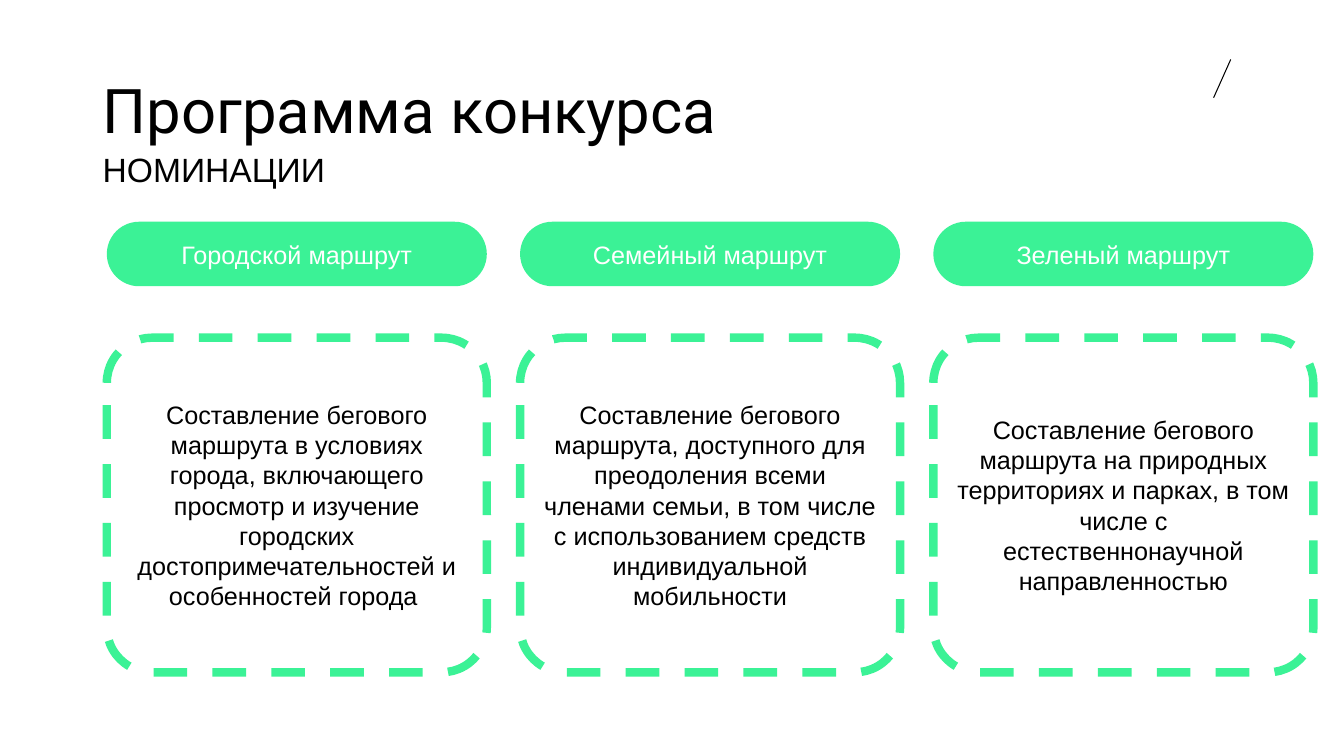
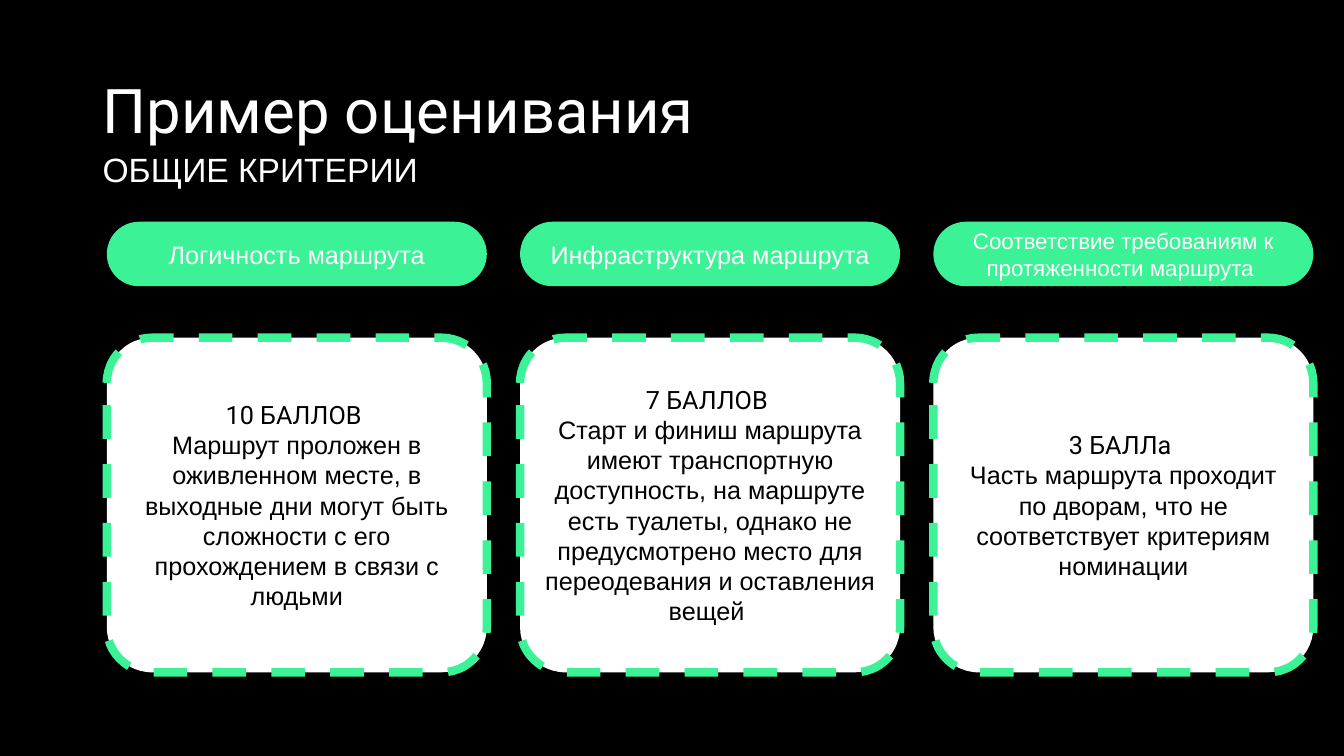
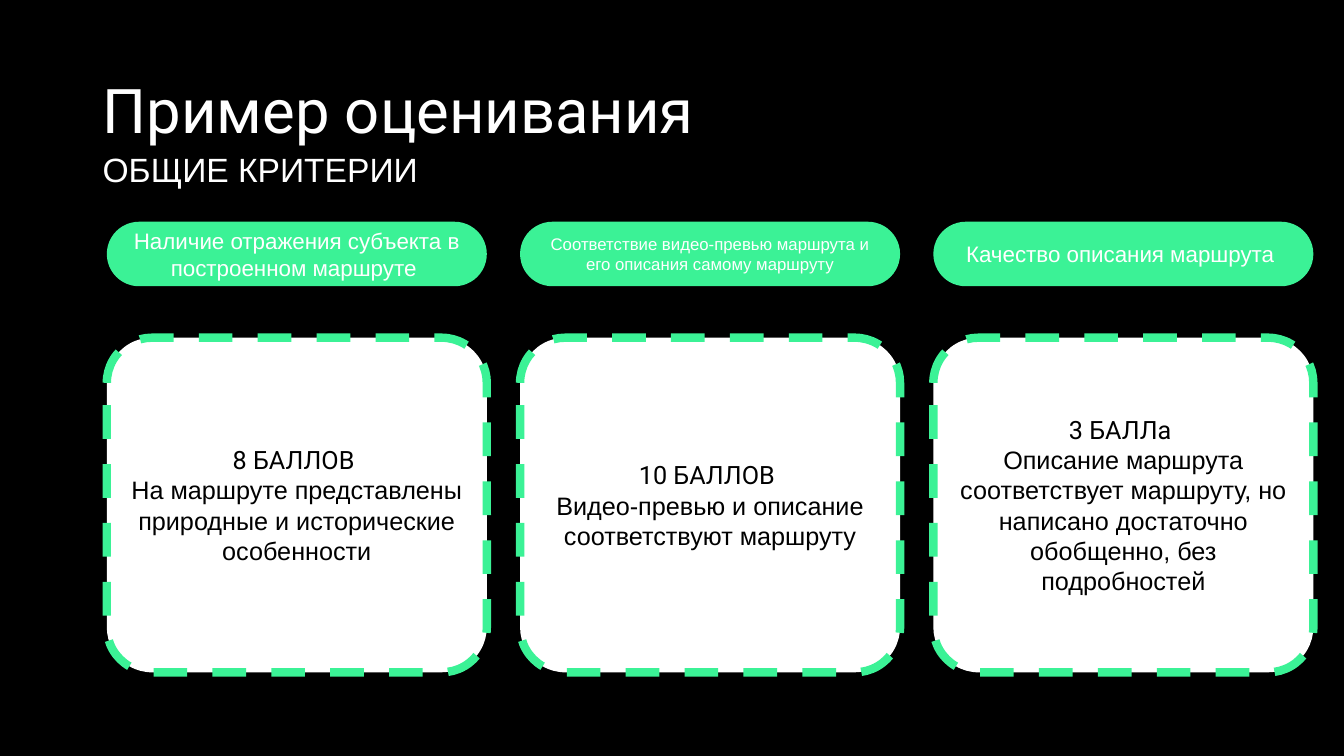
from pptx import Presentation
from pptx.dml.color import RGBColor
from pptx.enum.dml import MSO_LINE
from pptx.enum.shapes import MSO_CONNECTOR, MSO_SHAPE
from pptx.enum.text import MSO_ANCHOR, MSO_AUTO_SIZE, PP_ALIGN
from pptx.oxml.ns import qn
from pptx.util import Pt
from lxml import etree

# Shared look: 100 px to the inch
PX = 9144
BLACK = RGBColor(0x00, 0x00, 0x00)
WHITE = RGBColor(0xFF, 0xFF, 0xFF)
GREEN = RGBColor(0x3B, 0xF2, 0x96)
HEAD, BODY = "Roboto", "Arial"
LEFT, STEP, WIDE = 106, 410, 377

# Title, subtitle, dark theme, columns of (label, label size, lines)
SLIDES = [
    ("Программа конкурса", "НОМИНАЦИИ", False, [
        ("Городской маршрут", 18, [
            "Составление бегового маршрута в условиях города, включающего "
            "просмотр и изучение городских достопримечательностей и "
            "особенностей города "]),
        ("Семейный маршрут", 18, [
            "Составление бегового маршрута, доступного для преодоления всеми "
            "членами семьи, в том числе с использованием средств "
            "индивидуальной мобильности"]),
        ("Зеленый маршрут", 18, [
            "Составление бегового маршрута на природных территориях и парках, "
            "в том числе с естественнонаучной направленностью"]),
    ]),
    ("Пример оценивания", "ОБЩИЕ КРИТЕРИИ", True, [
        ("Логичность маршрута", 18, [
            "10 БАЛЛОВ ",
            "Маршрут проложен в оживленном месте, в выходные дни могут быть "
            "сложности с его прохождением в связи с людьми"]),
        ("Инфраструктура маршрута", 18, [
            "7 БАЛЛОВ ",
            "Старт и финиш маршрута имеют транспортную доступность, на "
            "маршруте есть туалеты, однако не предусмотрено место для "
            "переодевания и оставления вещей "]),
        ("Соответствие требованиям к протяженности маршрута ", 16, [
            "3 БАЛЛа ",
            "Часть маршрута проходит по дворам, что не соответствует "
            "критериям номинации"]),
    ]),
    ("Пример оценивания", "ОБЩИЕ КРИТЕРИИ", True, [
        ("Наличие отражения субъекта в построенном маршруте ", 16, [
            "8 БАЛЛОВ ",
            "На маршруте представлены природные и исторические особенности"]),
        ("Соответствие видео-превью маршрута и его описания самому маршруту",
         12, [
            "10 БАЛЛОВ ",
            "Видео-превью и описание соответствуют маршруту"]),
        ("Качество описания маршрута ", 16, [
            "3 БАЛЛа ",
            "Описание маршрута соответствует маршруту, но написано достаточно "
            "обобщенно, без подробностей"]),
    ]),
]


def write(frame, lines, size, color, align, fonts):
    """Fill a text frame, one paragraph per line."""
    frame.word_wrap = True
    frame.text = "\n".join(lines)
    for para, name in zip(frame.paragraphs, fonts):
        para.alignment = align
        para.font.name = name
        para.font.size = Pt(size)
        para.font.color.rgb = color


def add_box(slide, x, y, high, round_by, fill):
    """Add a rounded box of one column's width."""
    box = slide.shapes.add_shape(MSO_SHAPE.ROUNDED_RECTANGLE, x * PX, y * PX,
                                 WIDE * PX, high * PX)
    box.adjustments[0] = round_by
    box.shadow.inherit = False
    box.fill.solid()
    box.fill.fore_color.rgb = fill
    box.text_frame.vertical_anchor = MSO_ANCHOR.MIDDLE
    return box


deck = Presentation()
deck.slide_width, deck.slide_height = 1333 * PX + 3048, 750 * PX

for head, sub, dark, cols in SLIDES:
    slide = deck.slides.add_slide(deck.slide_layouts[5])
    ink = WHITE if dark else BLACK
    back = slide.background.fill
    back.solid()
    back.fore_color.rgb = BLACK if dark else WHITE

    # Slanted corner stroke on light slides
    if not dark:
        slash = slide.shapes.add_connector(
            MSO_CONNECTOR.STRAIGHT, 1204 * PX, 97 * PX, 1221 * PX, 59 * PX)
        slash.line.color.rgb = BLACK
        slash.line.width = Pt(0.75)
        etree.SubElement(slash._element.spPr, qn("a:effectLst"))

    # Title and subtitle
    title = slide.shapes.title
    title.left, title.top = 92 * PX, 40 * PX
    title.width, title.height = 1150 * PX, 145 * PX
    title.text_frame.vertical_anchor = MSO_ANCHOR.MIDDLE
    write(title.text_frame, [head], 44, ink, PP_ALIGN.LEFT, [HEAD])
    title.text_frame.paragraphs[0].line_spacing = 0.9
    note = slide.shapes.add_textbox(92 * PX, 143 * PX, 704 * PX, 50 * PX)
    write(note.text_frame, [sub], 24, ink, PP_ALIGN.LEFT, [BODY])
    note.text_frame.auto_size = MSO_AUTO_SIZE.SHAPE_TO_FIT_TEXT

    # Columns: a green label above a dashed card
    for i, (label, size, lines) in enumerate(cols):
        x = LEFT + i * STEP
        pill = add_box(slide, x, 220, 64, 0.5, GREEN)
        pill.line.fill.background()
        write(pill.text_frame, [label], size, WHITE, PP_ALIGN.CENTER, [BODY])

        card = add_box(slide, x, 335, 332, 0.135, WHITE)
        card.line.color.rgb = GREEN
        card.line.width = Pt(6)
        card.line.dash_style = MSO_LINE.DASH
        fonts = [HEAD, BODY][-len(lines):]
        write(card.text_frame, lines, 18, BLACK, PP_ALIGN.CENTER, fonts)

deck.save("out.pptx")
